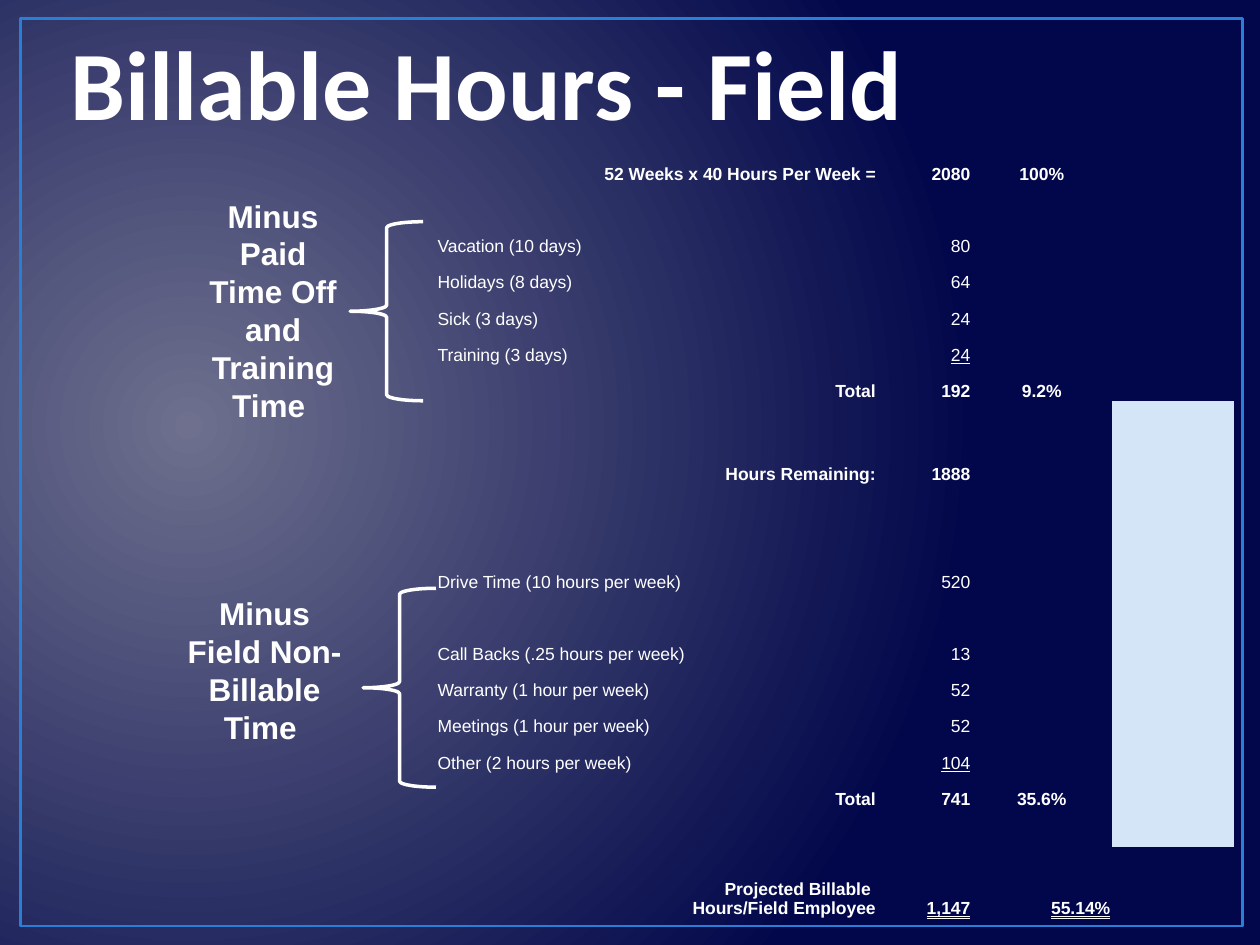
from lxml import etree
from pptx import Presentation
from pptx.dml.color import RGBColor
from pptx.enum.shapes import MSO_SHAPE
from pptx.enum.text import MSO_ANCHOR, MSO_UNDERLINE, PP_ALIGN
from pptx.oxml.ns import qn
from pptx.util import Cm, Pt

LEFT, CENTER, RIGHT = PP_ALIGN.LEFT, PP_ALIGN.CENTER, PP_ALIGN.RIGHT
SINGLE, DOUBLE = MSO_UNDERLINE.SINGLE_LINE, MSO_UNDERLINE.DOUBLE_LINE
MIDDLE, BOTTOM = MSO_ANCHOR.MIDDLE, MSO_ANCHOR.BOTTOM
RECTANGLE, LEFT_BRACE = MSO_SHAPE.RECTANGLE, MSO_SHAPE.LEFT_BRACE

COLORS = {
    "glow": "6E708E",
    "navy": "01074A",
    "frame": "297FD5",
    "text": "FFFFFF",
    "panel": "D4E5F7",
}
FORMATS = {
    "title": {"name": "Calibri", "size": Pt(56), "bold": True},
    "label": {"name": "Arial", "size": Pt(18), "bold": True},
    "detail": {"name": "Arial", "size": Pt(10), "bold": False},
    "sum": {"name": "Arial", "size": Pt(10), "bold": True},
}
CELL_MARGINS = {
    "margin_left": Cm(0.03),
    "margin_right": Cm(0.03),
    "margin_top": Cm(0.03),
    "margin_bottom": 0,
}
NO_GRID_STYLE = "{2D5ABB26-0587-4C30-8999-92F81FD0307C}"
COLUMN_WIDTHS = (8.89, 1.91, 2.82, 2.46)
PANEL_ROWS = range(7, 17)
ROW = 0.73
# Height, format, description, hours, share of the year, underline
HOURS_ROWS = [
    (1.37, "sum", "52 Weeks x 40 Hours Per Week =", "2080", "100%", None),
    (ROW, "detail", "", "", "", None),
    (ROW, "detail", "Vacation (10 days)", "80", "", None),
    (ROW, "detail", "Holidays (8 days)", "64", "", None),
    (ROW, "detail", "Sick (3 days)", "24", "", None),
    (ROW, "detail", "Training (3 days)", "24", "", SINGLE),
    (ROW, "sum", "Total", "192", "9.2%", None),
    (0.86, "detail", "", "", "", None),
    (0.81, "sum", "Hours Remaining:", "1888", "", None),
    (ROW, "detail", "", "", "", None),
    (1.45, "detail", "Drive Time (10 hours per week)", "520", "", None),
    (1.45, "detail", "Call Backs (.25 hours per week)", "13", "", None),
    (ROW, "detail", "Warranty (1 hour per week)", "52", "", None),
    (ROW, "detail", "Meetings (1 hour per week)", "52", "", None),
    (ROW, "detail", "Other (2 hours per week)", "104", "", SINGLE),
    (ROW, "sum", "Total", "741", "35.6%", None),
    (0.76, "detail", "", "", "", None),
    (1.45, "sum", "Projected Billable \nHours/Field Employee", "1,147", "55.14%", DOUBLE),
]


def color(name):
    return RGBColor.from_string(COLORS[name])


def set_attributes(target, values):
    for name, value in values.items():
        setattr(target, name, value)


def write(paragraph, text, style, alignment=LEFT, underline=None):
    paragraph.text = text
    paragraph.alignment = alignment
    for run in paragraph.runs:
        set_attributes(run.font, {**FORMATS[style], "underline": underline})
        run.font.color.rgb = color("text")


def paint_background(slide):
    fill = slide.background.fill
    fill.gradient()
    for stop, name in zip(fill.gradient_stops, ("glow", "navy")):
        stop.color.rgb = color(name)
    gradient = slide.element.find(".//" + qn("a:gradFill"))
    gradient.remove(gradient.find(qn("a:lin")))
    circle = etree.SubElement(gradient, qn("a:path"), path="circle")
    etree.SubElement(circle, qn("a:fillToRect"), l="15000", t="50000", r="85000", b="60000")


def add_outline(slide, preset, box, line_color, line_width):
    shape = slide.shapes.add_shape(preset, *map(Cm, box))
    shape.shadow.inherit = False
    shape.fill.background()
    shape.line.color.rgb = color(line_color)
    shape.line.width = Pt(line_width)


def add_text_box(slide, box, text, style, alignment=LEFT):
    frame = slide.shapes.add_textbox(*map(Cm, box)).text_frame
    frame.word_wrap = True
    write(frame.paragraphs[0], text, style, alignment)
    return frame


def add_title(slide, box):
    frame = add_text_box(slide, box, "Billable Hours - Field", "title")
    frame.vertical_anchor = MIDDLE
    frame.paragraphs[0].line_spacing = 0.9


def fill_cell(cell, text, style, alignment, underline):
    set_attributes(cell, {**CELL_MARGINS, "vertical_anchor": BOTTOM})
    cell.fill.background()
    paragraph = cell.text_frame.paragraphs[0]
    if text:
        write(paragraph, text, style, alignment, underline)
    else:
        # An empty cell needs a small end mark, or its row grows
        etree.SubElement(paragraph._p, qn("a:endParaRPr"), sz="1000")


def add_hours_table(slide, box):
    frame = slide.shapes.add_table(len(HOURS_ROWS), len(COLUMN_WIDTHS), *map(Cm, box))
    table = frame.table
    set_attributes(table, {"first_row": False, "horz_banding": False})
    frame.element.find(".//" + qn("a:tableStyleId")).text = NO_GRID_STYLE
    for column, width in zip(table.columns, COLUMN_WIDTHS):
        column.width = Cm(width)
    for index, (height, style, label, hours, share, underline) in enumerate(HOURS_ROWS):
        row = table.rows[index]
        row.height = Cm(height)
        label_alignment = RIGHT if style == "sum" else LEFT
        share_alignment = RIGHT if underline == DOUBLE else CENTER
        entries = (
            (label, label_alignment, None),
            (hours, RIGHT, underline),
            (share, share_alignment, underline),
            ("", LEFT, None),
        )
        for cell, (text, alignment, line) in zip(row.cells, entries):
            fill_cell(cell, text, style, alignment, line)
        if index in PANEL_ROWS:
            panel = row.cells[3].fill
            panel.solid()
            panel.fore_color.rgb = color("panel")


def add_deduction(slide, box, text, label_size, brace_top, brace_height):
    """Place a label at the left of the box and a brace along its right side."""
    left, top, width, _ = box
    brace_width = 1.47
    add_text_box(slide, (left, top, *label_size), text, "label", CENTER)
    brace_box = (left + width - brace_width, top + brace_top, brace_width, brace_height)
    add_outline(slide, LEFT_BRACE, brace_box, "text", 2)


def main():
    presentation = Presentation()
    presentation.slide_width, presentation.slide_height = Cm(25.4), Cm(19.05)
    slide = presentation.slides.add_slide(presentation.slide_layouts[6])
    paint_background(slide)
    add_outline(slide, RECTANGLE, (0.41, 0.38, 24.64, 18.29), "frame", 1.5)
    add_hours_table(slide, (8.79, 2.34, 16.08, 16.18))
    add_title(slide, (1.17, 0.84, 23.06, 1.91))
    add_deduction(slide, (3.78, 3.84, 4.75, 4.88),
                  "Minus Paid Time Off and Training Time ", (3.45, 4.88), 0.63, 3.61)
    add_deduction(slide, (3.38, 11.86, 5.41, 4.01),
                  "Minus Field Non-Billable Time ", (3.91, 3.33), 0, 4.01)
    presentation.save("out.pptx")


if __name__ == "__main__":
    main()
